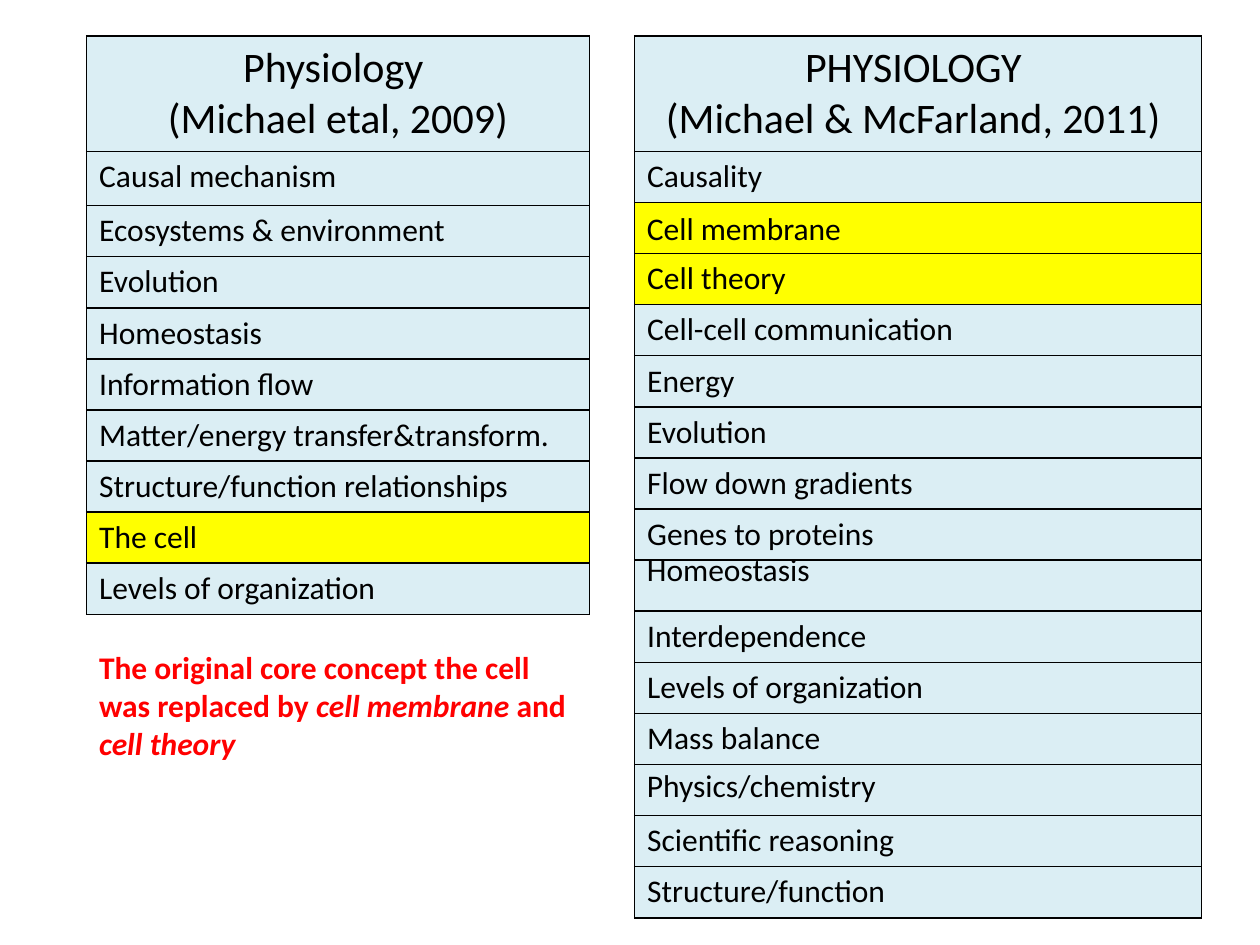
"""Build a slide comparing two lists of physiology core concepts."""
from lxml.etree import SubElement
from pptx import Presentation
from pptx.dml.color import RGBColor as Color
from pptx.enum.text import MSO_AUTO_SIZE as AutoSize, PP_ALIGN as Align
from pptx.oxml.ns import qn
from pptx.util import Pt

COLORS = {"pale": "DBEEF4", "highlight": "FFFF00", "text": "000000", "note": "FF0000"}
HEADER_HEIGHT, ROW_HEIGHT = 65.7, 29.2
LEFT, RIGHT, TOP = 49.5, 362.6, 20.7


def add_span(para, text, size=18, color="text", bold=False, italic=False):
    span = para.add_run()
    span.text = text
    span.font.name = "Calibri"
    span.font.size = Pt(size)
    span.font.bold = bold
    span.font.italic = italic
    span.font.color.rgb = Color.from_string(COLORS[color])


def style_cell(cell, fill):
    properties = cell._tc.get_or_add_tcPr()
    for side in ("lnL", "lnR", "lnT", "lnB"):
        line = SubElement(properties, qn(f"a:{side}"), w=str(Pt(1)))
        solid = SubElement(line, qn("a:solidFill"))
        SubElement(solid, qn("a:srgbClr"), val=COLORS["text"])
    cell.fill.solid()
    cell.fill.fore_color.rgb = Color.from_string(COLORS[fill])


deck = Presentation()
deck.slide_width, deck.slide_height = Pt(720), Pt(540)
page = deck.slides.add_slide(deck.slide_layouts[6])

revised_concepts = [
    "Causality", "", "Cell theory", "Cell-cell communication", "Energy",
    "Evolution", "Flow down gradients", "Genes to proteins", "",
    "Interdependence", "Levels of organization", "Mass balance", "",
    "Scientific reasoning", "Structure/function",
]
first_concepts = [
    "Causal mechanism", "Ecosystems & environment", "Evolution", "Homeostasis",
    "Information flow", "Matter/energy transfer&transform.",
    "Structure/function relationships", "The cell", "Levels of organization",
]
tables = [
    (RIGHT, 324, ["PHYSIOLOGY ", "(Michael & McFarland, 2011) "],
     revised_concepts, {2, 3}, ROW_HEIGHT),
    (LEFT, 287.3, ["Physiology ", "(Michael etal, 2009)"],
     first_concepts, {8}, 31),
]
for left, width, heading, concepts, highlighted, first_height in tables:
    heights = [HEADER_HEIGHT, first_height] + [ROW_HEIGHT] * (len(concepts) - 1)
    table = page.shapes.add_table(
        len(heights), 1, Pt(left), Pt(TOP), Pt(width), Pt(sum(heights))).table
    table.first_row = table.horz_banding = False
    for index, height in enumerate(heights):
        table.rows[index].height = Pt(height)
        style_cell(table.cell(index, 0), "highlight" if index in highlighted else "pale")

    header = table.cell(0, 0).text_frame
    for para, text in zip((header.paragraphs[0], header.add_paragraph()), heading):
        para.alignment = Align.CENTER
        add_span(para, text, size=24)
    for index, concept in enumerate(concepts, start=1):
        if concept:
            add_span(table.cell(index, 0).text_frame.paragraphs[0], concept)

labels = [("Cell membrane", 115.9, 126.7), ("Homeostasis", 311, 108.7),
          ("Physics/chemistry", 434.2, 147.6)]
for text, top, width in labels:
    box = page.shapes.add_textbox(Pt(RIGHT), Pt(top), Pt(width), Pt(29.1))
    box.text_frame.word_wrap = False
    box.text_frame.auto_size = AutoSize.SHAPE_TO_FIT_TEXT
    add_span(box.text_frame.paragraphs[0], text)

note = page.shapes.add_textbox(Pt(LEFT), Pt(366.9), Pt(287.3), Pt(72.7))
note.text_frame.word_wrap = True
note.text_frame.auto_size = AutoSize.SHAPE_TO_FIT_TEXT
for text, italic in [
    ("The original core concept the cell was replaced by ", False),
    ("cell membrane ", True), ("and ", False), ("cell theory", True),
]:
    add_span(note.text_frame.paragraphs[0], text, color="note", bold=True, italic=italic)

deck.save("out.pptx")
